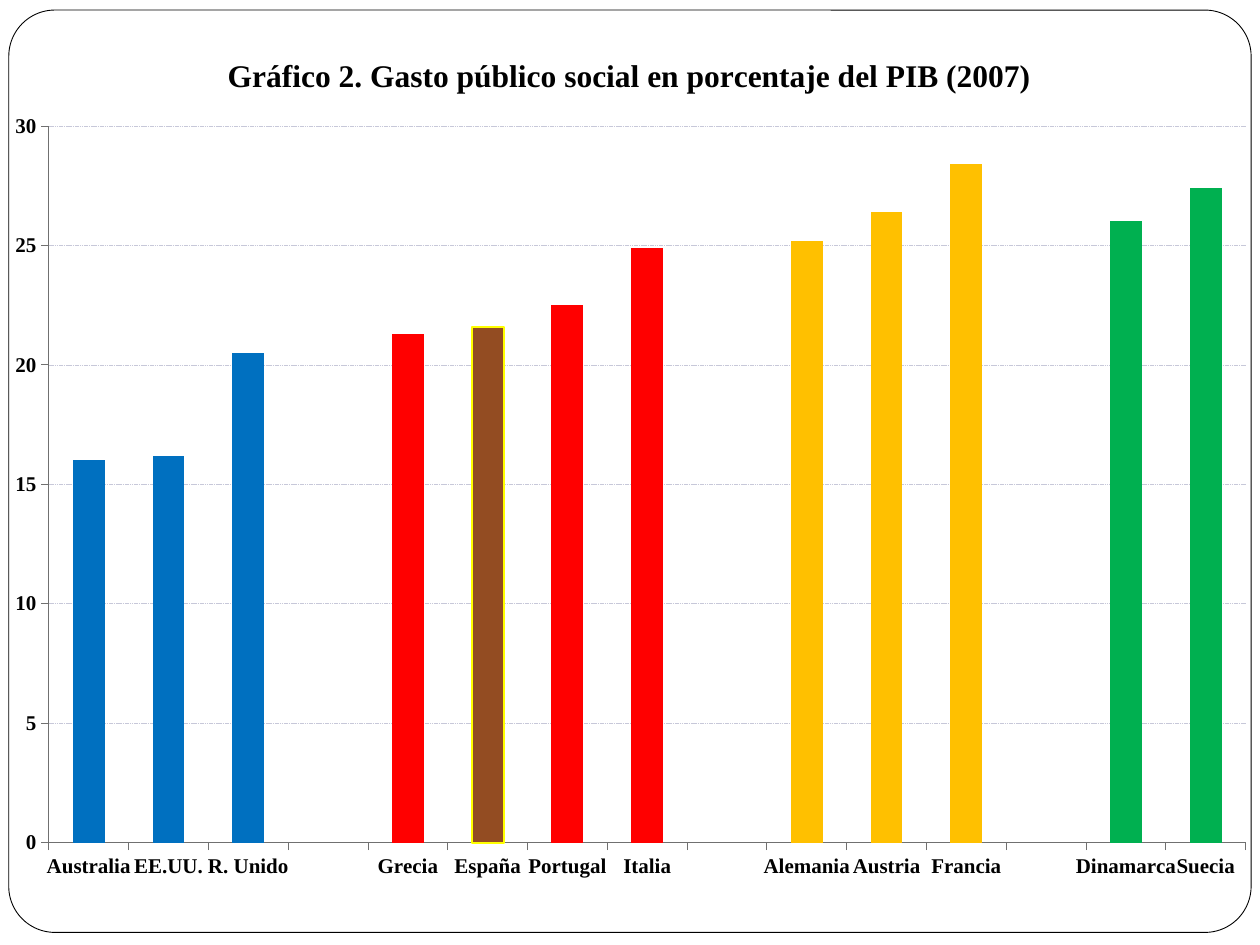
from lxml import etree
from pptx import Presentation
from pptx.chart.data import CategoryChartData
from pptx.dml.color import RGBColor
from pptx.enum.chart import XL_CHART_TYPE, XL_TICK_MARK
from pptx.enum.dml import MSO_LINE
from pptx.enum.shapes import MSO_SHAPE
from pptx.oxml.ns import qn
from pptx.util import Inches, Pt

COLUMNS = XL_CHART_TYPE.COLUMN_CLUSTERED
OUTSIDE = XL_TICK_MARK.OUTSIDE
DASH = MSO_LINE.SQUARE_DOT
ROUNDED = MSO_SHAPE.ROUNDED_RECTANGLE

BLACK = RGBColor(0x00, 0x00, 0x00)
WHITE = RGBColor(0xFF, 0xFF, 0xFF)
GRID = RGBColor(0xC7, 0xC8, 0xD9)
AXIS = RGBColor(0x70, 0x70, 0x70)
BLUE = RGBColor(0x00, 0x70, 0xC0)
RED = RGBColor(0xFF, 0x00, 0x00)
BROWN = RGBColor(0x93, 0x4C, 0x22)
YELLOW = RGBColor(0xFF, 0xFF, 0x00)
AMBER = RGBColor(0xFF, 0xC0, 0x00)
GREEN = RGBColor(0x00, 0xB0, 0x50)

FONT = "Times New Roman"
TITLE = "Gráfico 2. Gasto público social en porcentaje del PIB (2007)"
HIGHLIGHT = "España"
GROUPS = [
    (BLUE, {"Australia": 16, "EE.UU.": 16.2, "R. Unido": 20.5}),
    (RED, {"Grecia": 21.3, HIGHLIGHT: 21.6, "Portugal": 22.5, "Italia": 24.9}),
    (AMBER, {"Alemania": 25.2, "Austria": 26.4, "Francia": 28.4}),
    (GREEN, {"Dinamarca": 26, "Suecia": 27.4}),
]


def spending_columns():
    """Return (country, value, colour) rows with an empty row between groups."""
    rows = []
    for color, countries in GROUPS:
        if rows:
            rows.append(("", None, None))
        rows += [(name, value, color) for name, value in countries.items()]
    return rows


def set_plot_layout(plot_area, **shares):
    """Place the inside of the plot by shares of the chart's size."""
    for old in plot_area.findall(qn("c:layout")):
        plot_area.remove(old)
    layout = etree.Element(qn("c:layout"))
    manual = etree.SubElement(layout, qn("c:manualLayout"))
    etree.SubElement(manual, qn("c:layoutTarget"), val="inner")
    for mode in ("xMode", "yMode"):
        etree.SubElement(manual, qn(f"c:{mode}"), val="edge")
    for key, share in shares.items():
        etree.SubElement(manual, qn(f"c:{key}"), val=str(share))
    plot_area.insert(0, layout)


def add_frame(slide, box):
    sp = slide.shapes.add_shape(ROUNDED, *box)
    sp.adjustments[0] = 0.05
    sp.shadow.inherit = False
    sp.fill.solid()
    sp.fill.fore_color.rgb = WHITE
    sp.line.color.rgb = BLACK
    sp.line.width = Pt(0.5)


def format_title(chart):
    tf = chart.chart_title.text_frame
    tf.text = TITLE
    font = tf.paragraphs[0].font
    font.name, font.size, font.bold = FONT, Pt(18), True
    font.color.rgb = BLACK
    chart.chart_title.include_in_layout = False


def format_axes(chart):
    for axis in (chart.category_axis, chart.value_axis):
        axis.major_tick_mark = OUTSIDE
        axis.format.line.color.rgb = AXIS
        axis.format.line.width = Pt(0.5)
        font = axis.tick_labels.font
        font.name, font.size, font.bold = FONT, Pt(12), True
        font.color.rgb = BLACK

    values = chart.value_axis
    values.minimum_scale, values.maximum_scale, values.major_unit = 0, 30, 5
    values.tick_labels.number_format = "0"
    values.tick_labels.number_format_is_linked = False
    line = values.major_gridlines.format.line
    line.color.rgb = GRID
    line.width = Pt(0.25)
    line.dash_style = DASH


def color_columns(series, rows):
    for i, (name, value, color) in enumerate(rows):
        if value is None:
            continue
        fmt = series.points[i].format
        fmt.fill.solid()
        fmt.fill.fore_color.rgb = BROWN if name == HIGHLIGHT else color
        if name == HIGHLIGHT:
            fmt.line.color.rgb = YELLOW
            fmt.line.width = Pt(1.25)


def add_spending_chart(slide, box):
    rows = spending_columns()
    data = CategoryChartData()
    data.categories = [name for name, _, _ in rows]
    data.add_series("Series 1", [value for _, value, _ in rows])
    chart = slide.shapes.add_chart(COLUMNS, *box, data).chart
    chart.font.name, chart.font.size = FONT, Pt(10)
    chart.font.color.rgb = BLACK
    chart.has_legend = False
    plot = chart.plots[0]
    plot.gap_width = 150
    plot.vary_by_categories = False
    format_title(chart)
    format_axes(chart)
    color_columns(plot.series[0], rows)
    set_plot_layout(chart._chartSpace.chart.plotArea,
                    x=0.047, y=0.115, w=0.934, h=0.828)


def main():
    prs = Presentation()
    prs.slide_width, prs.slide_height = Inches(10), Inches(7.5)
    slide = prs.slides.add_slide(prs.slide_layouts[6])
    add_frame(slide, [Inches(v) for v in (0.07, 0.08, 9.86, 7.32)])
    add_spending_chart(slide, [Inches(v) for v in (-0.09, 0.21, 10.17, 6.87)])
    prs.save("out.pptx")


if __name__ == "__main__":
    main()
